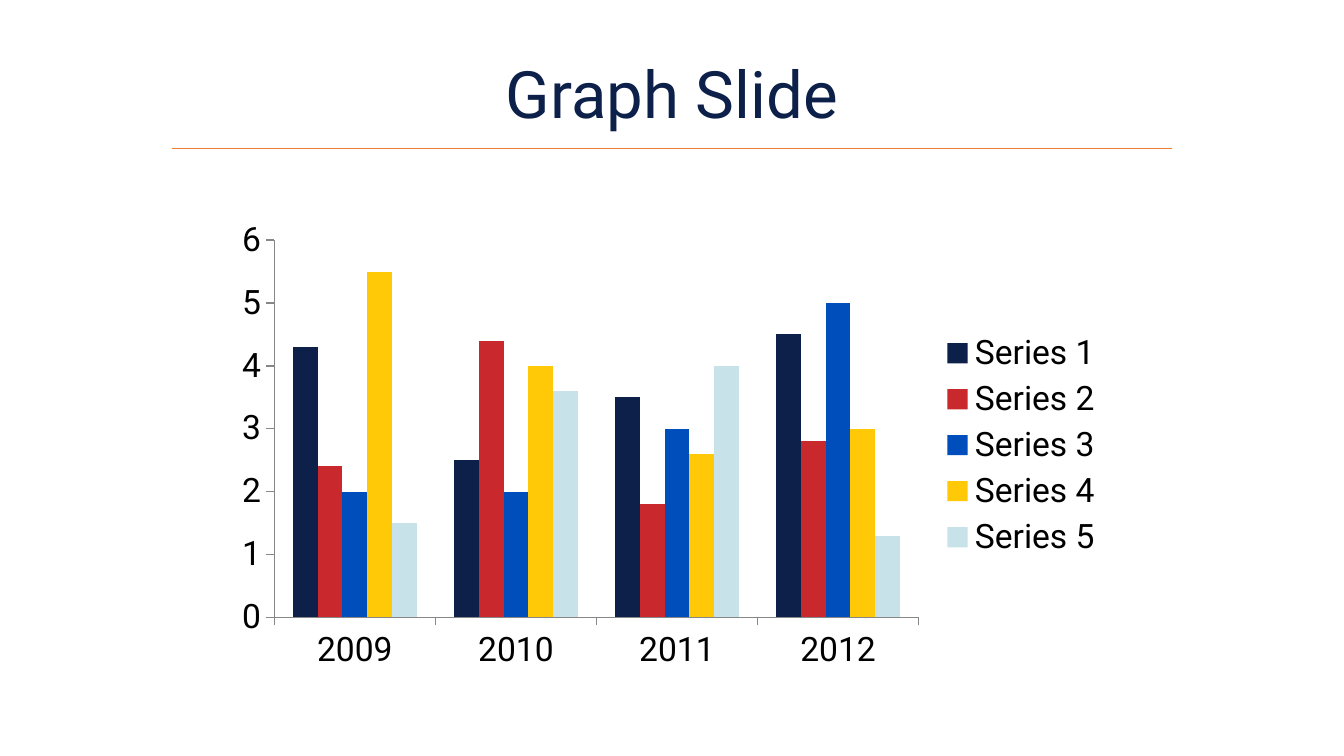
from dataclasses import dataclass

from lxml import etree
from pptx import Presentation
from pptx.chart.data import CategoryChartData
from pptx.dml.color import RGBColor
from pptx.enum.chart import XL_CHART_TYPE, XL_LEGEND_POSITION, XL_TICK_MARK
from pptx.enum.shapes import MSO_CONNECTOR
from pptx.enum.text import MSO_ANCHOR, PP_ALIGN
from pptx.oxml.ns import qn
from pptx.util import Cm, Pt

CLUSTERED = XL_CHART_TYPE.COLUMN_CLUSTERED
LEGEND_RIGHT = XL_LEGEND_POSITION.RIGHT
TICK_OUTSIDE = XL_TICK_MARK.OUTSIDE
TICK_NONE = XL_TICK_MARK.NONE
STRAIGHT = MSO_CONNECTOR.STRAIGHT
MIDDLE = MSO_ANCHOR.MIDDLE
CENTER = PP_ALIGN.CENTER
TITLE_ONLY = 5


@dataclass(frozen=True)
class Theme:
    font: str = "Roboto"
    background: str = "FFFFFF"
    heading: str = "0D204A"
    text: str = "000000"
    rule: str = "ED7D31"
    axis: str = "878787"
    series: tuple = ("0D204A", "C9282D", "004EBC", "FFC907", "C8E2EA")
    title_size: float = 35
    chart_size: float = 18
    rule_width: float = 0.5
    axis_width: float = 0.75


class SlideBuilder:
    def __init__(self, presentation, theme):
        self.theme = theme
        self.slide = presentation.slides.add_slide(presentation.slide_layouts[TITLE_ONLY])
        fill = self.slide.background.fill
        fill.solid()
        fill.fore_color.rgb = RGBColor.from_string(theme.background)

    def style_font(self, font, size, color):
        font.name = self.theme.font
        font.size = Pt(size)
        font.bold = False
        font.color.rgb = RGBColor.from_string(color)

    def style_line(self, line, color, width):
        line.color.rgb = RGBColor.from_string(color)
        line.width = Pt(width)

    def title(self, wording, left, top, width, height):
        heading = self.slide.shapes.title
        heading.left, heading.top = Cm(left), Cm(top)
        heading.width, heading.height = Cm(width), Cm(height)
        frame = heading.text_frame
        frame.text = wording
        frame.word_wrap = True
        frame.vertical_anchor = MIDDLE
        frame.margin_top = frame.margin_bottom = 0
        paragraph = frame.paragraphs[0]
        paragraph.alignment = CENTER
        paragraph.line_spacing = 0.9
        self.style_font(paragraph.runs[0].font, self.theme.title_size, self.theme.heading)

    def rule(self, left, right, height):
        divider = self.slide.shapes.add_connector(
            STRAIGHT, Cm(left), Cm(height), Cm(right), Cm(height)
        )
        self.style_line(divider.line, self.theme.rule, self.theme.rule_width)
        etree.SubElement(divider.element.spPr, qn("a:effectLst"))

    def axis(self, axis):
        axis.has_major_gridlines = False
        axis.major_tick_mark = TICK_OUTSIDE
        axis.minor_tick_mark = TICK_NONE
        self.style_line(axis.format.line, self.theme.axis, self.theme.axis_width)
        self.style_font(axis.tick_labels.font, self.theme.chart_size, self.theme.text)

    def column_chart(self, years, values, left, top, width, height):
        data = CategoryChartData()
        data.categories = years
        for name, numbers in values.items():
            data.add_series(name, numbers)
        chart = self.slide.shapes.add_chart(
            CLUSTERED, Cm(left), Cm(top), Cm(width), Cm(height), data
        ).chart
        chart.has_title = False
        self.style_font(chart.font, self.theme.chart_size, self.theme.text)
        chart.has_legend = True
        chart.legend.position = LEGEND_RIGHT
        chart.legend.include_in_layout = False
        self.style_font(chart.legend.font, self.theme.chart_size, self.theme.text)
        self.axis(chart.category_axis)
        self.axis(chart.value_axis)
        chart.value_axis.minimum_scale = 0
        chart.value_axis.maximum_scale = 6
        chart.value_axis.major_unit = 1
        plot = chart.plots[0]
        plot.gap_width = 150
        plot.overlap = 0
        plot.vary_by_categories = False
        for series, color in zip(plot.series, self.theme.series):
            series.invert_if_negative = False
            series.format.fill.solid()
            series.format.fill.fore_color.rgb = RGBColor.from_string(color)


def main():
    presentation = Presentation()
    presentation.slide_width = Cm(25.4)
    presentation.slide_height = Cm(14.28)
    builder = SlideBuilder(presentation, Theme())
    builder.title("Graph Slide", 0.76, 1.02, 23.88, 1.63)
    years = ["2009", "2010", "2011", "2012"]
    values = {
        "Series 1": (4.3, 2.5, 3.5, 4.5),
        "Series 2": (2.4, 4.4, 1.8, 2.8),
        "Series 3": (2, 2, 3, 5),
        "Series 4": (5.5, 4, 2.6, 3),
        "Series 5": (1.5, 3.6, 4, 1.3),
    }
    builder.column_chart(years, values, 4.24, 3.99, 16.87, 8.84)
    builder.rule(3.25, 22.15, 2.8)
    presentation.save("out.pptx")


if __name__ == "__main__":
    main()
